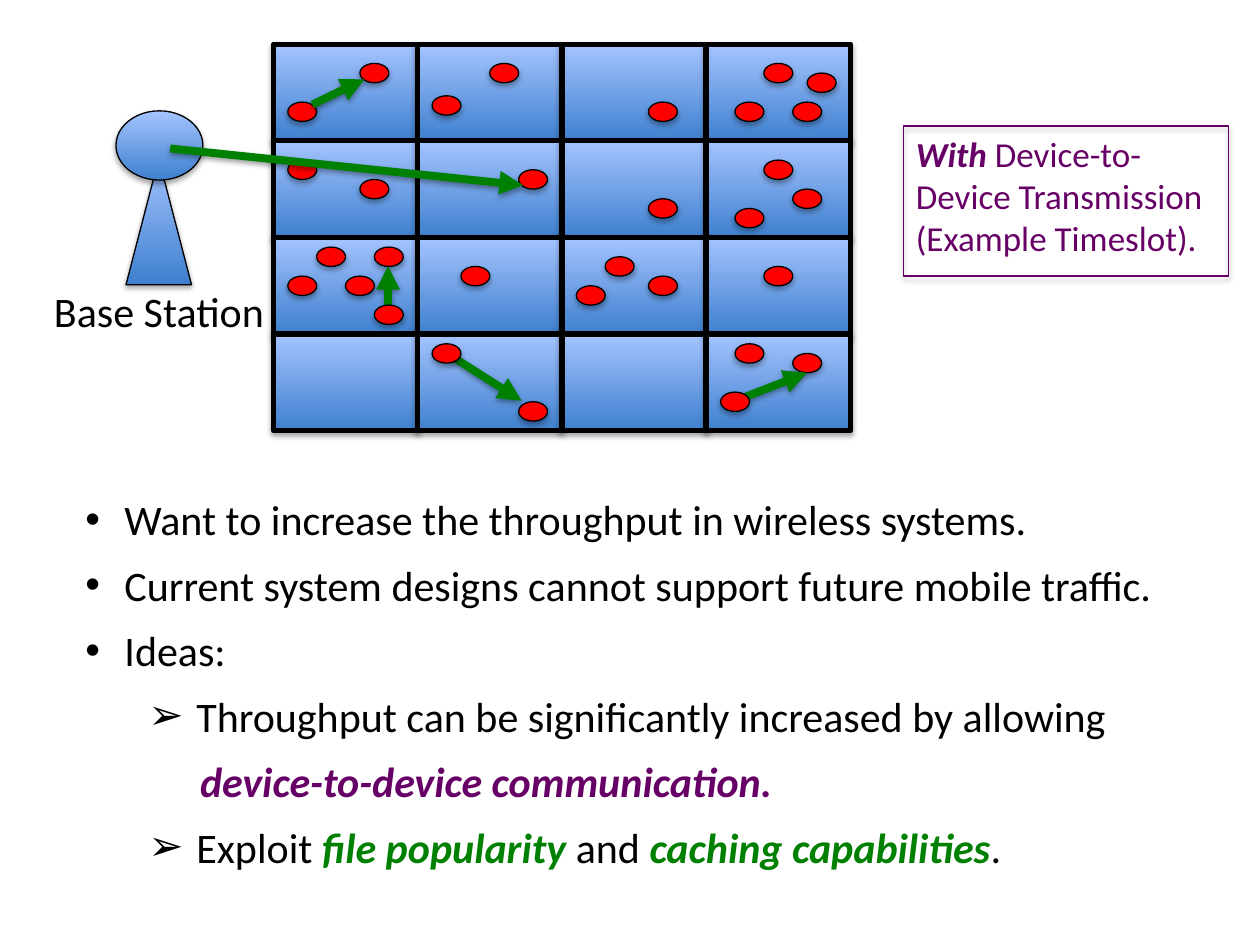
from dataclasses import dataclass

from lxml import etree
from pptx import Presentation, util as u
from pptx.dml.color import RGBColor
from pptx.enum import shapes, text
from pptx.oxml import ns


@dataclass(frozen=True)
class Theme:
    font: str = "Calibri"
    body: int = 24
    caption: int = 20
    black: str = "000000"
    red: str = "FF0000"
    green: str = "008000"
    purple: str = "660066"
    gradient: tuple = ("3F80CE", "A4C4FF")
    thin: float = 0.75
    cell_line: float = 3
    arrow_line: float = 4.5


T = Theme()
SLIDE_W, SLIDE_H = u.Inches(10), u.Inches(7.5)

# Cell grid: origin and cell size in percent of the slide
GRID_X, GRID_Y, CELL_W, CELL_H = 21.7, 4.67, 11.45, 10.23
COLS = ROWS = 4

# Devices as (column, row) in tenths of a cell, by row of cells
DEVICES = [
    (1, 6), (6, 2), (11, 5.35), (15, 2), (26, 6), (32, 6), (34, 2), (36, 6), (37, 3),
    (1, 12), (6, 14), (17, 13), (26, 16), (34, 12), (36, 15), (32, 17),
    (1, 24), (3, 21), (5, 24), (7, 21), (13, 23), (21, 25), (23, 22), (26, 24), (34, 23),
    (36, 32), (17, 37),
]
# Devices that lie over the start of their arrow, and one neighbour
TOP_DEVICES = [(11, 31), (32, 31), (7, 27), (31, 36)]
# Device-to-device links, in tenths of a cell
LINKS = [
    ((2.7, 6.25), (6.3, 3.65)),
    ((11.95, 31.9), (17.2, 36.9)),
    ((32, 36.9), (37, 34)),
    ((7.95, 28), (7.95, 22.95)),
]
DOWNLINK = ((-7.15, 10.8), (17.3, 14.6))

# Text: (indent, hanging, bullet, runs); a run is (words, emphasis colour or None)
POINT, IDEA = (0.31, 0.31, "•"), (0.88, 0.38, "➢")
BODY = [
    (*POINT, [("Want to increase the throughput in wireless systems.", None)]),
    (*POINT, [("Current system designs cannot support future mobile traffic.", None)]),
    (*POINT, [("Ideas:", None)]),
    (*IDEA, [("Throughput can be significantly increased by allowing", None)]),
    (0.91, 0, None, [("device-to-device communication.", T.purple)]),
    (*IDEA, [("Exploit ", None), ("file popularity", T.green), (" and ", None),
             ("caching capabilities", T.green), (".", None)]),
]
CAPTION = [
    [("With", T.purple), (" Device-to-Device Transmission", None)],
    [("(Example Timeslot).", None)],
]


def rgb(code):
    return RGBColor.from_string(code)


def px(share):
    return round(SLIDE_W * share / 100)


def py(share):
    return round(SLIDE_H * share / 100)


def on_grid(col, row):
    """Slide percent of a point given in tenths of a cell."""
    return GRID_X + col * CELL_W / 10, GRID_Y + row * CELL_H / 10


def add_shadow(sp, dist=1.8, alpha=35):
    sp_pr = sp._element.spPr
    for old in sp_pr.findall(ns.qn("a:effectLst")):
        sp_pr.remove(old)
    effects = etree.SubElement(sp_pr, ns.qn("a:effectLst"))
    shadow = etree.SubElement(effects, ns.qn("a:outerShdw"), blurRad=str(u.Pt(3.1)),
                              dist=str(u.Pt(dist)), dir="5400000", rotWithShape="0")
    color = etree.SubElement(shadow, ns.qn("a:srgbClr"), val=T.black)
    etree.SubElement(color, ns.qn("a:alpha"), val=str(alpha * 1000))


def add_block(slide, kind, x, y, w, h, fill=None, line=T.black, width=T.thin):
    """Preset shape; fill is a colour, a pair of gradient colours or None."""
    sp = slide.shapes.add_shape(kind, px(x), py(y), px(w), py(h))
    if fill is None:
        sp.fill.background()
    elif isinstance(fill, tuple):
        sp.fill.gradient()
        sp.fill.gradient_angle = 90
        for stop, code in zip(sp.fill.gradient_stops, fill):
            stop.color.rgb = rgb(code)
    else:
        sp.fill.solid()
        sp.fill.fore_color.rgb = rgb(fill)
    sp.line.color.rgb = rgb(line)
    sp.line.width = u.Pt(width)
    add_shadow(sp)
    return sp


def add_device(slide, col, row):
    x, y = on_grid(col, row)
    add_block(slide, shapes.MSO_SHAPE.OVAL, x, y, CELL_W / 5, CELL_H / 5, T.red)


def add_arrow(slide, start, end):
    (x1, y1), (x2, y2) = on_grid(*start), on_grid(*end)
    line = slide.shapes.add_connector(shapes.MSO_CONNECTOR.STRAIGHT,
                                      px(x1), py(y1), px(x2), py(y2))
    line.line.color.rgb = rgb(T.green)
    line.line.width = u.Pt(T.arrow_line)
    etree.SubElement(line.line._get_or_add_ln(), ns.qn("a:tailEnd"), type="triangle")
    add_shadow(line, dist=1.6, alpha=38)


def add_text_box(slide, x, y, w, h, wrap=True):
    tf = slide.shapes.add_textbox(px(x), py(y), px(w), py(h)).text_frame
    tf.word_wrap = wrap
    tf.auto_size = text.MSO_AUTO_SIZE.SHAPE_TO_FIT_TEXT
    return tf


def next_paragraph(tf, index):
    return tf.paragraphs[0] if index == 0 else tf.add_paragraph()


def add_runs(p, runs, size, color=T.black):
    for words, emphasis in runs:
        r = p.add_run()
        r.text = words
        r.font.name, r.font.size = T.font, u.Pt(size)
        r.font.bold = r.font.italic = emphasis is not None
        r.font.color.rgb = rgb(emphasis or color)


def set_bullet(p, indent, hanging, bullet):
    p_pr = p._p.get_or_add_pPr()
    p_pr.set("marL", str(u.Inches(indent)))
    p_pr.set("indent", str(-u.Inches(hanging)))
    if bullet:
        etree.SubElement(p_pr, ns.qn("a:buFont"), typeface="Arial")
        etree.SubElement(p_pr, ns.qn("a:buChar"), char=bullet)


def add_cells(slide):
    for row in range(ROWS):
        for col in range(COLS):
            x, y = on_grid(col * 10, row * 10)
            add_block(slide, shapes.MSO_SHAPE.RECTANGLE, x, y, CELL_W, CELL_H,
                      T.gradient, width=T.cell_line)


def add_body(slide):
    tf = add_text_box(slide, 5.8, 50, 90, 43.07)
    for i, (indent, hanging, bullet, runs) in enumerate(BODY):
        p = next_paragraph(tf, i)
        p.line_spacing = 1.3
        set_bullet(p, indent, hanging, bullet)
        add_runs(p, runs, T.body)


def add_caption(slide):
    tf = add_text_box(slide, 71.7, 13.33, 25.8, 14.8)
    for i, runs in enumerate(CAPTION):
        add_runs(next_paragraph(tf, i), runs, T.caption, T.purple)
    add_block(slide, shapes.MSO_SHAPE.RECTANGLE, 71.7, 13.33, 25.8, 15.87, line=T.purple)


def main():
    prs = Presentation()
    prs.slide_width, prs.slide_height = SLIDE_W, SLIDE_H
    slide = prs.slides.add_slide(prs.slide_layouts[6])

    # Base station mast and label
    add_block(slide, shapes.MSO_SHAPE.ISOSCELES_TRIANGLE, 10, 16.8, 5.2, 13.33, T.gradient)
    label = add_text_box(slide, 3.3, 29.6, 18.9, 6.67, wrap=False)
    add_runs(label.paragraphs[0], [("Base Station", None)], T.body)

    # Cells, devices and links
    add_cells(slide)
    for device in DEVICES:
        add_device(slide, *device)
    for link in LINKS:
        add_arrow(slide, *link)
    for device in TOP_DEVICES:
        add_device(slide, *device)

    # Base station head, text, and the downlink on top
    add_block(slide, shapes.MSO_SHAPE.OVAL, 9.2, 11.73, 6.9, 7.33, T.gradient)
    add_body(slide)
    add_caption(slide)
    add_arrow(slide, *DOWNLINK)

    prs.save("out.pptx")


if __name__ == "__main__":
    main()
